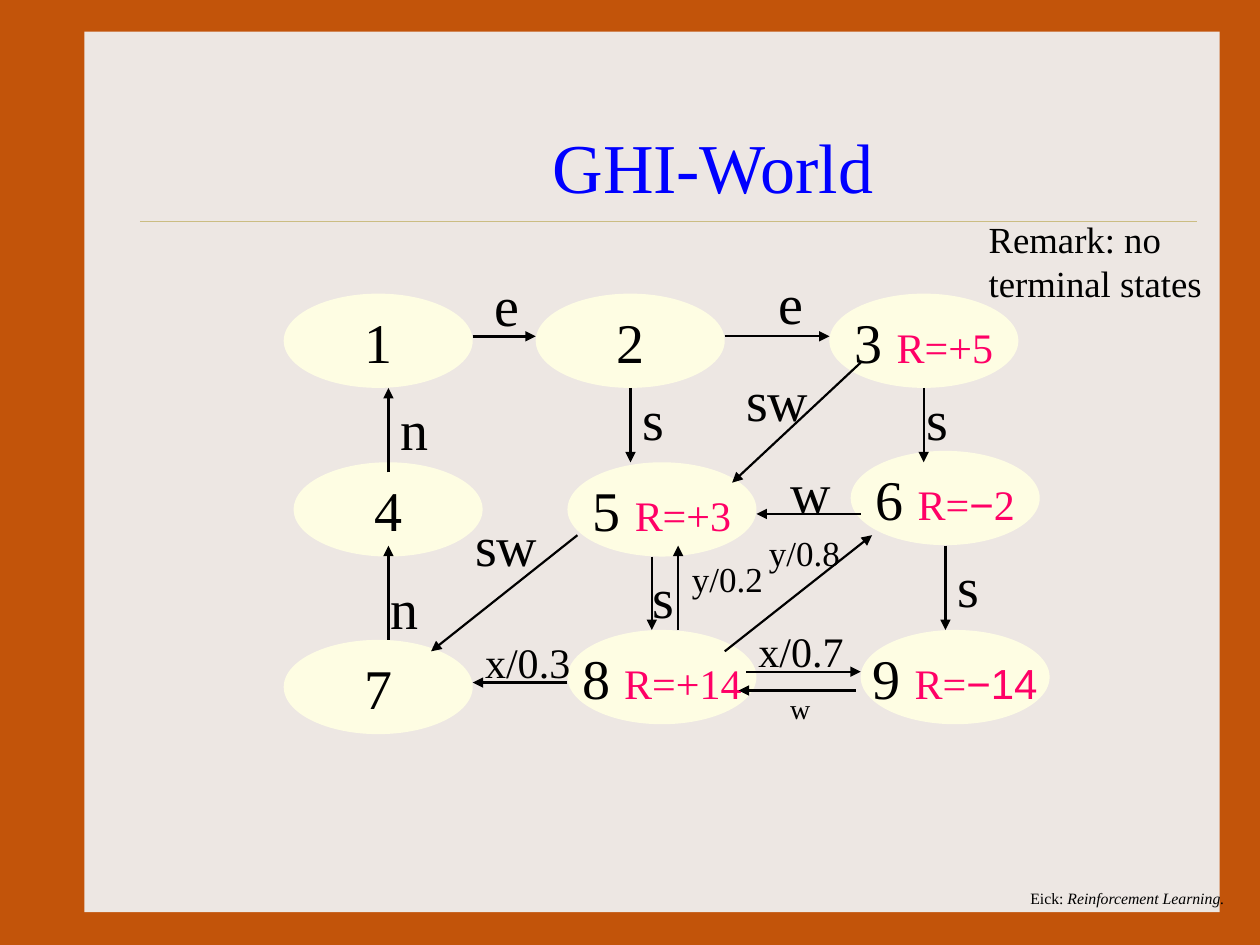
import pptx
import pptx.util
import pptx.dml.color
import pptx.enum.shapes
import pptx.enum.text
import lxml.etree
from collections import namedtuple
from dataclasses import dataclass
from pptx.util import Cm

Box = namedtuple("Box", "x y w h")
RGB = pptx.dml.color.RGBColor.from_string
ANCHOR = pptx.enum.text.MSO_ANCHOR
ALIGN = pptx.enum.text.PP_ALIGN
FIT = pptx.enum.text.MSO_AUTO_SIZE
SHAPE = pptx.enum.shapes.MSO_SHAPE


@dataclass(frozen=True)
class Theme:
    serif: str = "Times New Roman"
    sans: str = "Arial"
    frame: str = "C2540A"
    panel: str = "EDE7E3"
    rule: str = "CBBD83"
    node: str = "FEFDE3"
    ink: str = "000000"
    blue: str = "0000FF"
    pink: str = "FF0066"
    title: int = 40
    large: int = 32
    mid: int = 24
    note: int = 21
    small: int = 20
    tiny: int = 16
    foot: int = 9


LOOK = Theme()


def style(item, form):
    for key, value in form.items():
        setattr(item, key, value)


def font(size, color=LOOK.ink, name=LOOK.serif, **more):
    return {"size": pptx.util.Pt(size), "name": name, "color": color, **more}


def write(para, text, form):
    run = para.add_run()
    run.text = text
    run.font.color.rgb = RGB(form["color"])
    style(run.font, {key: val for key, val in form.items() if key != "color"})


def place(box, x, y, w, h):
    return Cm(box.x + x), Cm(box.y + y), Cm(w), Cm(h)


def add_text(slide, spot, paras, wrap=False):
    """Each paragraph is a list of (text, form) runs."""
    frame = slide.shapes.add_textbox(*spot).text_frame
    style(frame, {"word_wrap": wrap, "auto_size": FIT.SHAPE_TO_FIT_TEXT})
    for i, runs in enumerate(paras):
        para = frame.add_paragraph() if i else frame.paragraphs[0]
        for text, form in runs:
            write(para, text, form)


def add_solid(slide, kind, spot, color):
    shape = slide.shapes.add_shape(kind, *spot)
    shape.shadow.inherit = False
    shape.fill.solid()
    shape.fill.fore_color.rgb = RGB(color)
    shape.line.fill.background()
    return shape


def add_line(slide, box, ends, color, width, head=False):
    x1, y1, x2, y2 = ends
    line = slide.shapes.add_connector(
        pptx.enum.shapes.MSO_CONNECTOR.STRAIGHT,
        Cm(box.x + x1), Cm(box.y + y1), Cm(box.x + x2), Cm(box.y + y2))
    line.line.color.rgb = RGB(color)
    line.line.width = pptx.util.Pt(width)
    make = lxml.etree.SubElement
    if head:
        make(line.line._get_or_add_ln(), pptx.oxml.ns.qn("a:tailEnd"), type="triangle")
    make(line._element.spPr, pptx.oxml.ns.qn("a:effectLst"))


def add_panel(slide, box):
    """Panel with its rule and footer."""
    add_solid(slide, SHAPE.RECTANGLE, place(box, 0, 0, box.w, box.h), LOOK.panel)
    add_line(slide, box, (1.12, 3.81, 22.43, 3.81), LOOK.rule, 0.25)
    add_text(slide, place(box, 18.82, 17.15, 4.45, 0.64), [[
        ("Eick: ", font(LOOK.foot)),
        ("Reinforcement Learning.", font(LOOK.foot, italic=True))]], True)


def add_head(slide, box):
    """Title and remark."""
    add_text(slide, place(box, 9.19, 1.73, 7.42, 1.96),
             [[("GHI-World", font(LOOK.title, LOOK.blue))]])
    note = font(LOOK.note)
    add_text(slide, place(box, 17.98, 3.61, 4.83, 2.03),
             [[("Remark: no", note)], [("terminal states", note)]], True)


def add_graph(slide, box):
    """States, moves between them and move labels."""
    pink = font(LOOK.mid, LOOK.pink)
    sans = font(LOOK.mid, LOOK.pink, LOOK.sans)
    states = [
        ("1", 0, 0.64, []),
        ("2", 5.08, 0.64, []),
        ("3", 11, 0.64, [("R=+5", pink)]),
        ("6", 11.43, 3.81, [("R=", pink), ("−", sans), ("2", pink)]),
        ("9", 11.63, 7.42, [("R=", pink), ("−14", sans)]),
        ("8", 5.72, 7.42, [("R=+14", pink)]),
        ("5", 5.72, 4.04, [("R=+3", pink)]),
        ("4", 0.2, 4.04, []),
        ("7", 0, 7.62, []),
    ]
    for name, x, y, gain in states:
        oval = add_solid(slide, SHAPE.OVAL, place(box, x, y, 3.81, 1.9), LOOK.node)
        frame = oval.text_frame
        style(frame, {"word_wrap": False, "vertical_anchor": ANCHOR.MIDDLE})
        para = frame.paragraphs[0]
        para.alignment = ALIGN.CENTER
        write(para, name + " " if gain else name, font(LOOK.large))
        for text, form in gain:
            write(para, text, form)

    # Moves: start x, y and end x, y
    moves = [
        (3.81, 1.5, 5.08, 1.5), (8.89, 1.5, 11, 1.5),
        (12.9, 2.54, 12.9, 4.04), (13.34, 5.72, 13.34, 7.42),
        (7.95, 7.42, 7.95, 5.72), (11.63, 5.08, 9.53, 5.08),
        (11.53, 8.64, 9.17, 8.64), (6.99, 2.54, 6.99, 4.04),
        (7.42, 5.94, 7.42, 7.42), (2.11, 4.24, 2.11, 2.54),
        (2.11, 7.62, 2.11, 5.72), (5.72, 8.48, 3.81, 8.48),
        (5.92, 5.51, 2.97, 7.85), (9.32, 8.26, 11.63, 8.26),
        (8.89, 7.85, 11.86, 5.51), (11.63, 2.03, 9.04, 4.45),
    ]
    for i, ends in enumerate(moves):
        add_line(slide, box, ends, LOOK.ink, 1.25 if i else 1.75, True)

    # Labels by type size: width, height, wrap, then text and corners
    labels = [
        (LOOK.large, 1.02, 1.6, False, "e", [(3.99, 0.05), (9.73, 0)]),
        (LOOK.large, 0.97, 1.6, False, "s",
         [(12.7, 2.34), (13.34, 5.72), (7.19, 5.94), (6.99, 2.34)]),
        (LOOK.large, 0.64, 1.6, True, "n", [(2.11, 2.54), (1.91, 6.15)]),
        (LOOK.large, 1.78, 1.6, False, "sw", [(3.61, 4.88), (9.07, 1.96)]),
        (LOOK.large, 1.32, 1.6, False, "w", [(9.96, 3.81)]),
        (LOOK.mid, 2.24, 1.27, False, "x/0.7", [(9.32, 7.21)]),
        (LOOK.mid, 2.24, 1.27, False, "x/0.3", [(3.81, 7.42)]),
        (LOOK.small, 1.96, 1.12, False, "y/0.2", [(7.98, 5.84)]),
        (LOOK.small, 1.96, 1.12, False, "y/0.8", [(9.53, 5.31)]),
        (LOOK.tiny, 6.15, 0.94, True, "w", [(9.96, 8.53)]),
    ]
    for size, w, h, wrap, text, spots in labels:
        for x, y in spots:
            add_text(slide, place(box, x, y, w, h), [[(text, font(size))]], wrap)


def main():
    deck = pptx.Presentation()
    style(deck, {"slide_width": Cm(25.4), "slide_height": Cm(19.05)})
    slide = deck.slides.add_slide(deck.slide_layouts[6])
    slide.background.fill.solid()
    slide.background.fill.fore_color.rgb = RGB(LOOK.frame)
    panel = Box(1.7, 0.64, 22.89, 17.75)
    add_panel(slide, panel)
    add_graph(slide, Box(5.72, 5.28, 15.44, 9.53))
    add_head(slide, panel)
    deck.save("out.pptx")


if __name__ == "__main__":
    main()
